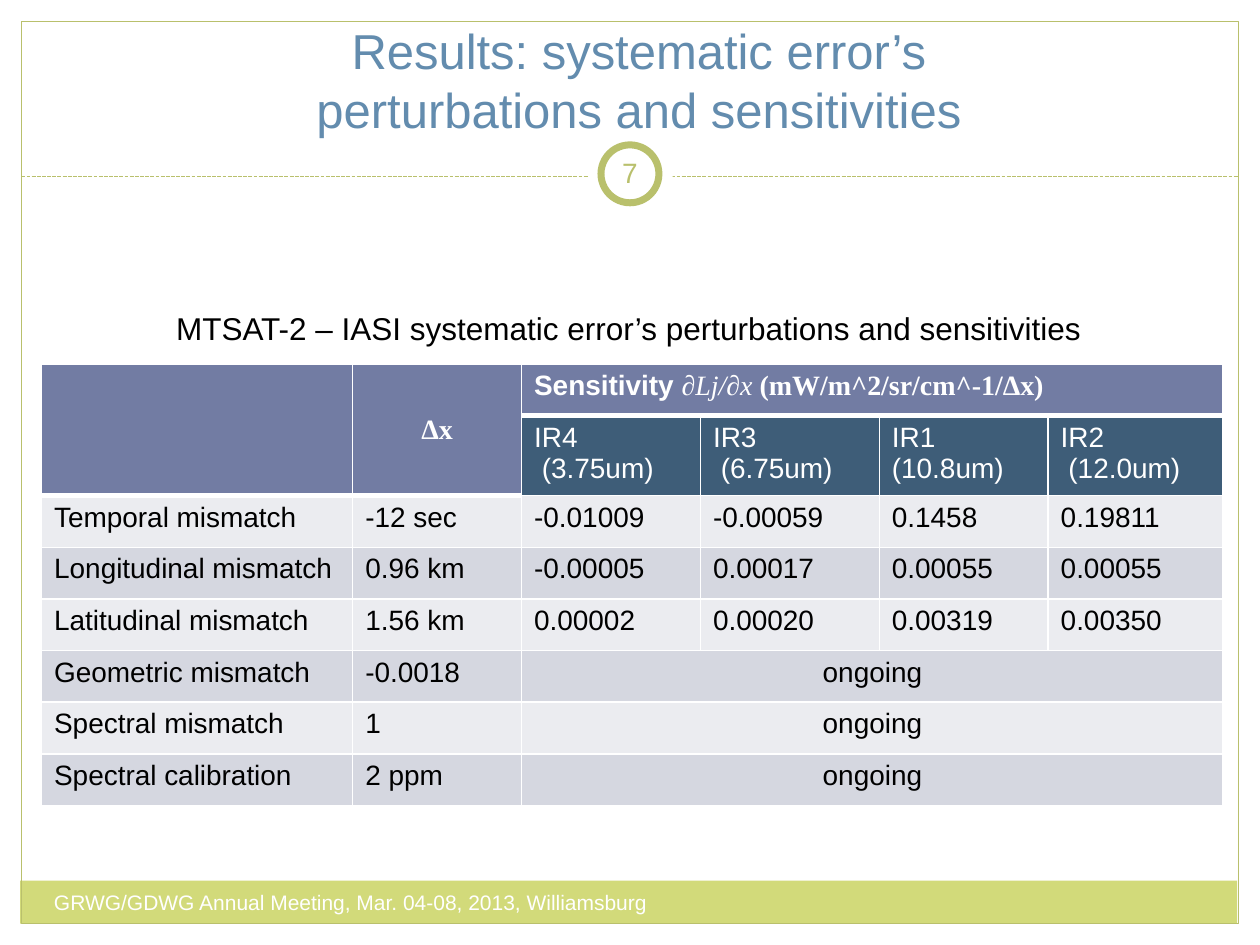
import pptx
import pptx.util
import pptx.dml.color
import pptx.enum.dml
import pptx.enum.shapes
import pptx.enum.text
import pptx.oxml
import pptx.oxml.ns
from pptx.util import Inches

RGBColor = pptx.dml.color.RGBColor
MSO_SHAPE = pptx.enum.shapes.MSO_SHAPE
ANCHOR = pptx.enum.text.MSO_ANCHOR
ALIGN = pptx.enum.text.PP_ALIGN

WHITE = RGBColor(0xFF, 0xFF, 0xFF)
BLACK = RGBColor(0, 0, 0)
GREEN = RGBColor(0xB9, 0xC0, 0x6C)
FOOTER_GREEN = RGBColor(0xD2, 0xDA, 0x7A)
TITLE_BLUE = RGBColor(0x63, 0x8C, 0xAE)
HEADER = RGBColor(0x72, 0x7C, 0xA3)
SUBHEADER = RGBColor(0x3E, 0x5D, 0x78)
BANDS = [RGBColor(0xEB, 0xEC, 0xF0), RGBColor(0xD5, 0xD7, 0xE0)]


def add_run(p, text, size, color, font="Arial", bold=False, italic=False):
    r = p.add_run()
    r.text = text
    r.font.size = pptx.util.Pt(size)
    r.font.name = font
    r.font.color.rgb = color
    r.font.bold = bold
    r.font.italic = italic


def add_panel(kind, x, y, w, h, fill=None, line=None, width=0.75):
    sp = s.shapes.add_shape(kind, Inches(x), Inches(y), Inches(w), Inches(h))
    sp.shadow.inherit = False
    if fill is None:
        sp.fill.background()
    else:
        sp.fill.solid()
        sp.fill.fore_color.rgb = fill
    if line is None:
        sp.line.fill.background()
    else:
        sp.line.color.rgb = line
        sp.line.width = pptx.util.Pt(width)


prs = pptx.Presentation()
prs.slide_width, prs.slide_height = Inches(10), Inches(7.5)
s = prs.slides.add_slide(prs.slide_layouts[6])

# Footer band, frame, divider and number ring
add_panel(MSO_SHAPE.RECTANGLE, 0.16, 6.99, 9.66, 0.34, fill=FOOTER_GREEN)
add_panel(MSO_SHAPE.RECTANGLE, 0.17, 0.17, 9.66, 7.16, line=GREEN)
divider = s.shapes.add_connector(pptx.enum.shapes.MSO_CONNECTOR.STRAIGHT,
                                 Inches(0.17), Inches(1.4), Inches(9.83), Inches(1.4))
divider.line.color.rgb = GREEN
divider.line.width = pptx.util.Pt(0.75)
divider.line.dash_style = pptx.enum.dml.MSO_LINE.SQUARE_DOT
divider._element.spPr.append(pptx.oxml.parse_xml(
    "<a:effectLst %s/>" % pptx.oxml.ns.nsdecls("a")))
add_panel(MSO_SHAPE.OVAL, 4.67, 1.05, 0.67, 0.67, fill=WHITE)
add_panel(MSO_SHAPE.OVAL, 4.77, 1.15, 0.46, 0.46, fill=WHITE, line=GREEN, width=4)

# Title, footer, slide number and table caption
texts = [
    ("Results: systematic error’s perturbations and sensitivities",
     1.67, 0.32, 6.8, 0.83, 28, TITLE_BLUE, ALIGN.CENTER, ANCHOR.BOTTOM, True),
    ("GRWG/GDWG Annual Meeting, Mar. 04-08, 2013, Williamsburg",
     0.33, 7.01, 6.01, 0.4, 12, WHITE, ALIGN.LEFT, ANCHOR.TOP, True),
    ("7", 4.75, 1.13, 0.5, 0.48, 16, GREEN, ALIGN.CENTER, ANCHOR.MIDDLE, True),
    ("MTSAT-2 – IASI systematic error’s perturbations and sensitivities",
     1.3, 2.4, 7.46, 0.4, 18, BLACK, ALIGN.LEFT, ANCHOR.TOP, False),
]
for text, x, y, w, h, size, color, align, anchor, wrap in texts:
    tf = s.shapes.add_textbox(Inches(x), Inches(y), Inches(w), Inches(h)).text_frame
    tf.word_wrap = wrap
    tf.vertical_anchor = anchor
    if text == "7":
        tf.margin_left = tf.margin_right = Inches(0.05)
    tf.paragraphs[0].alignment = align
    add_run(tf.paragraphs[0], text, size, color)

# Table grid
widths = [2.47, 1.34, 1.42, 1.42, 1.34, 1.39]
heights = [0.41, 0.59] + [0.41] * 6
table = s.shapes.add_table(len(heights), len(widths), Inches(0.33), Inches(2.89),
                           Inches(sum(widths)), Inches(sum(heights))).table
for column, width in zip(table.columns, widths):
    column.width = Inches(width)
for row, height in zip(table.rows, heights):
    row.height = Inches(height)

# Cell fills and white borders, heavier under the header cells
for i in range(len(heights)):
    for j in range(len(widths)):
        cell = table.cell(i, j)
        cell.fill.solid()
        if i == 0 or (i == 1 and j < 2):
            cell.fill.fore_color.rgb = HEADER
        else:
            cell.fill.fore_color.rgb = SUBHEADER if i == 1 else BANDS[i % 2]
        heavy_row = 1 if j < 2 else 0
        top = 3 if i == heavy_row + 1 else 1
        bottom = 3 if i == 0 or i == heavy_row else 1
        tcPr = cell._tc.get_or_add_tcPr()
        for k, (side, pts) in enumerate([("L", 1), ("R", 1), ("T", top), ("B", bottom)]):
            tcPr.insert(k, pptx.oxml.parse_xml(
                '<a:ln%s %s w="%d"><a:solidFill><a:srgbClr val="%s"/></a:solidFill></a:ln%s>'
                % (side, pptx.oxml.ns.nsdecls("a"), pptx.util.Pt(pts), WHITE, side)))

# Header rows
for j in range(2):
    table.cell(0, j).merge(table.cell(1, j))
table.cell(0, 2).merge(table.cell(0, 5))
delta = table.cell(0, 1)
delta.vertical_anchor = ANCHOR.MIDDLE
p = delta.text_frame.paragraphs[0]
p.alignment = ALIGN.CENTER
add_run(p, "Δx", 16, WHITE, "Times New Roman", bold=True)
p = table.cell(0, 2).text_frame.paragraphs[0]
add_run(p, "Sensitivity ", 16, WHITE, bold=True)
add_run(p, "∂Lj/∂x ", 16, WHITE, "Times New Roman", italic=True)
add_run(p, "(mW/m^2/sr/cm^-1/Δx)", 16, WHITE, "Times New Roman", bold=True)
channels = [("IR4", " (3.75um)"), ("IR3", " (6.75um)"),
            ("IR1", "(10.8um)"), ("IR2", " (12.0um)")]
for j, (channel, wavelength) in enumerate(channels, 2):
    tf = table.cell(1, j).text_frame
    add_run(tf.paragraphs[0], channel, 16, WHITE)
    add_run(tf.add_paragraph(), wavelength, 16, WHITE)

# Body rows; a lone result spans all four channels
body = [
    ["Temporal mismatch", "-12 sec", "-0.01009", "-0.00059", "0.1458", "0.19811"],
    ["Longitudinal mismatch", "0.96 km", "-0.00005", "0.00017", "0.00055", "0.00055"],
    ["Latitudinal mismatch", "1.56 km", "0.00002", "0.00020", "0.00319", "0.00350"],
    ["Geometric mismatch", "-0.0018", "ongoing"],
    ["Spectral mismatch", "1", "ongoing"],
    ["Spectral calibration", "2 ppm", "ongoing"],
]
for i, values in enumerate(body, 2):
    if len(values) == 3:
        table.cell(i, 2).merge(table.cell(i, 5))
        table.cell(i, 2).text_frame.paragraphs[0].alignment = ALIGN.CENTER
    for j, value in enumerate(values):
        add_run(table.cell(i, j).text_frame.paragraphs[0], value, 16, BLACK)

prs.save("out.pptx")
